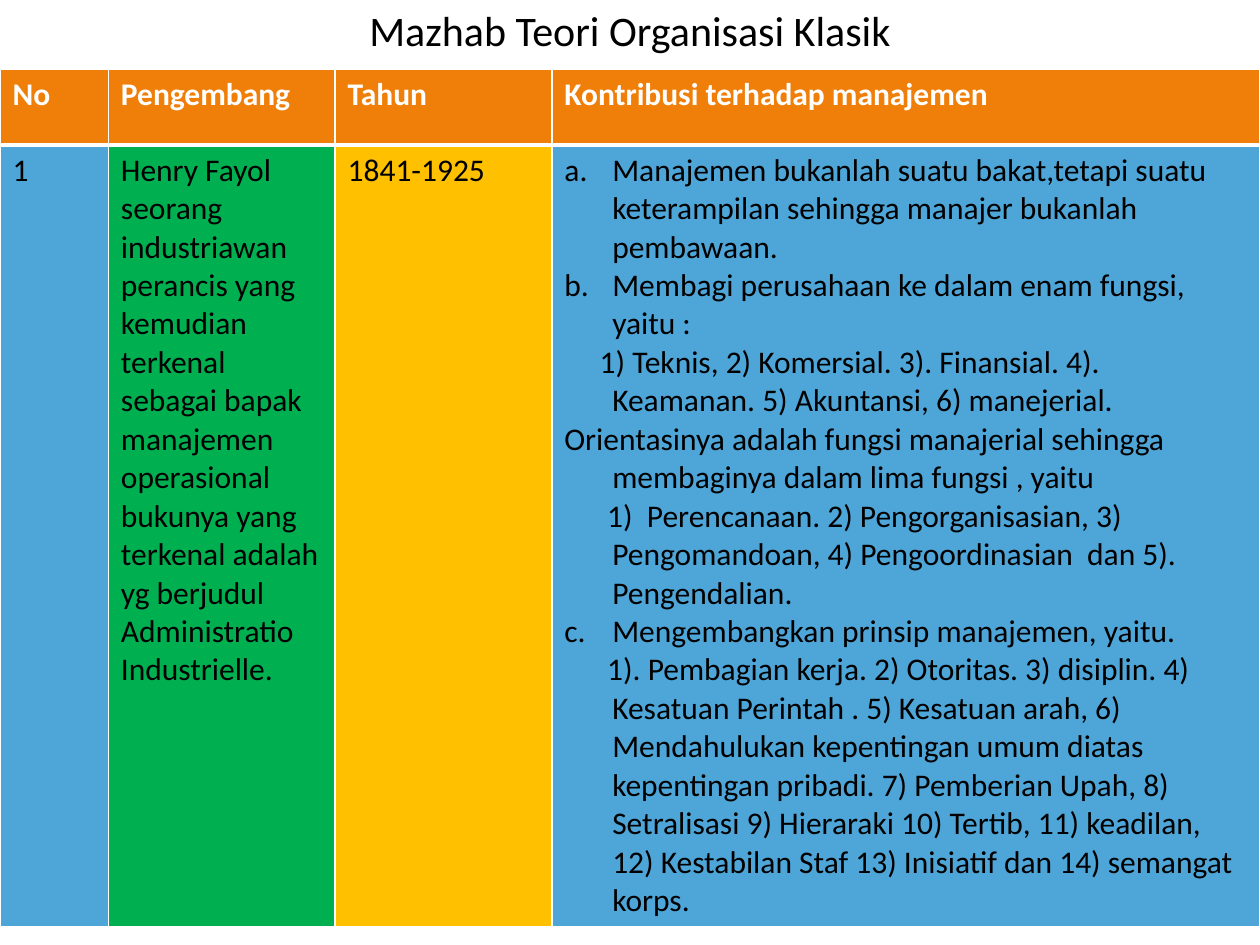
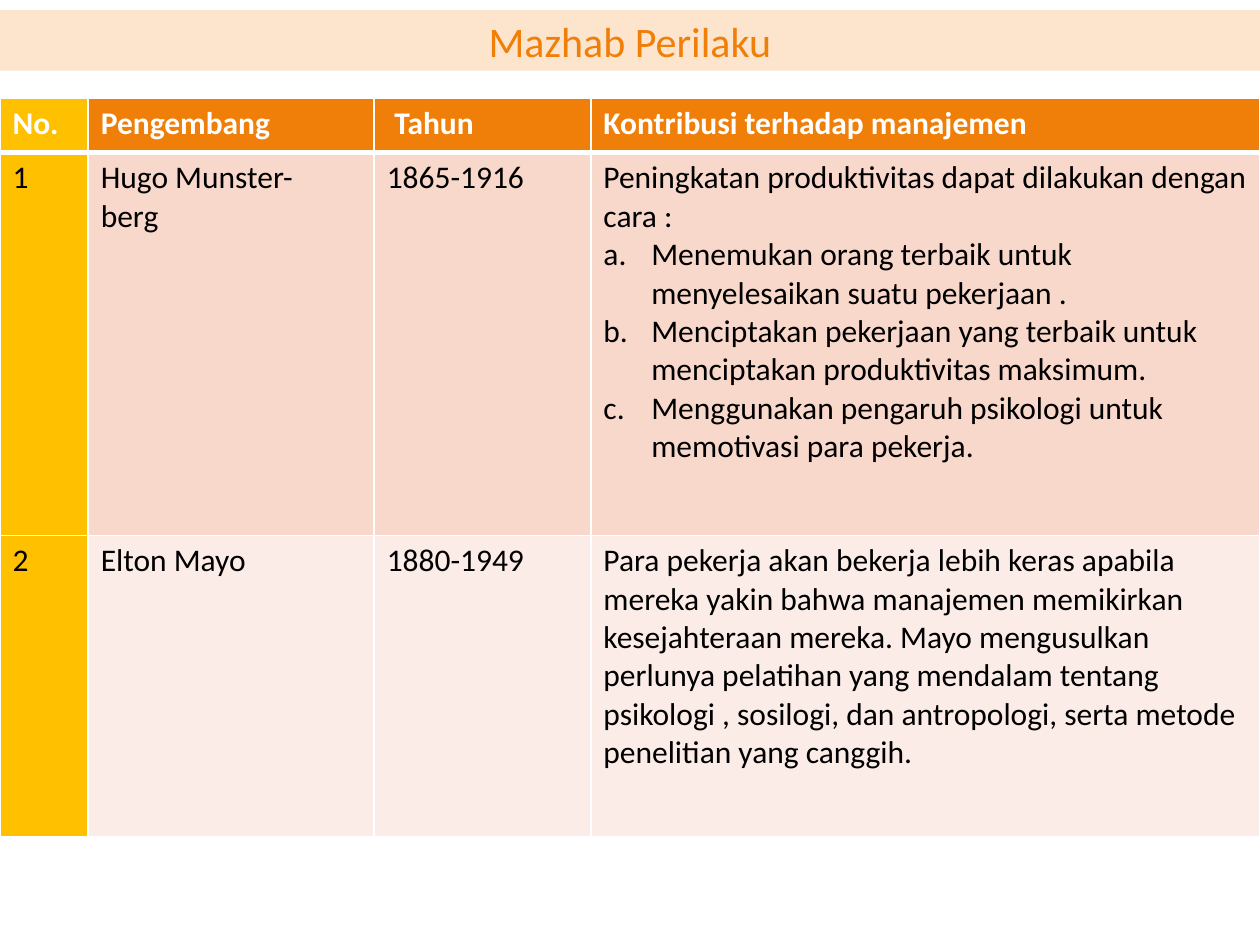
from dataclasses import dataclass

from lxml.etree import SubElement
from pptx import Presentation
from pptx.dml.color import RGBColor as RGB
from pptx.enum.text import MSO_ANCHOR as Anchor, MSO_AUTO_SIZE as AutoSize, PP_ALIGN as Align
from pptx.oxml.ns import qn
from pptx.util import Inches, Pt


@dataclass(frozen=True)
class Theme:
    font: str = "Calibri"
    title_size: int = 24
    cell_size: int = 18
    rule: int = 1
    header_rule: int = 3
    hang: float = 0.38
    white: str = "FFFFFF"
    black: str = "000000"
    orange: str = "F07F09"
    cream: str = "FDE5CD"
    amber: str = "FFC000"
    blue: str = "4EA5D8"
    green: str = "00B050"
    rose: str = "F9D8CC"
    pale_rose: str = "FCECE7"


@dataclass(frozen=True)
class Para:
    """A paragraph: left margin and first-line indent in inches, start of its a., b. numbering."""
    text: str
    left: float = 0
    first: float = 0
    letter: int = 0


T = Theme()


def lettered(text, start=1):
    return Para(text, T.hang, -T.hang, start)


def hanging(text, offset=0.0):
    """Paragraph without a letter; its first line starts offset inches from the cell margin."""
    return Para(text, T.hang, offset - T.hang)


class Deck:
    """Holds the theme and the current slide; lengths are percentages of the slide's size."""

    def __init__(self, theme):
        self.theme = theme
        self.prs = Presentation()
        self.prs.slide_width, self.prs.slide_height = Inches(10), Inches(7.5)
        self.s = None

    def x(self, share):
        return round(self.prs.slide_width * share / 100)

    def y(self, share):
        return round(self.prs.slide_height * share / 100)

    def add_slide(self):
        self.s = self.prs.slides.add_slide(self.prs.slide_layouts[5])

    def run(self, p, text, size, color, bold=False):
        r = p.add_run()
        r.text = text
        f = r.font
        f.name, f.size, f.bold = self.theme.font, Pt(size), bold
        f.color.rgb = RGB.from_string(color)

    def title(self, text, top, height, color, band=None):
        sp = self.s.shapes.title
        sp.left, sp.top, sp.width, sp.height = 0, self.y(top), self.x(100), self.y(height)
        if band:
            sp.fill.solid()
            sp.fill.fore_color.rgb = RGB.from_string(band)
        tf = sp.text_frame
        tf.auto_size, tf.vertical_anchor = AutoSize.NONE, Anchor.MIDDLE
        p = tf.paragraphs[0]
        p.alignment = Align.CENTER
        self.run(p, text, self.theme.title_size, color)

    def borders(self, cell, top, bottom):
        tc_pr = cell._tc.get_or_add_tcPr()
        rule = self.theme.rule
        for side, width in zip("LRTB", (rule, rule, top, bottom)):
            ln = SubElement(tc_pr, qn(f"a:ln{side}"), w=str(Pt(width)))
            fill = SubElement(ln, qn("a:solidFill"))
            SubElement(fill, qn("a:srgbClr"), val=self.theme.white)

    def paragraph(self, p, para, color, bold):
        p_pr = p._p.get_or_add_pPr()
        p_pr.set("marL", str(Inches(para.left)))
        p_pr.set("indent", str(Inches(para.first)))
        if para.letter:
            SubElement(p_pr, qn("a:buAutoNum"), type="alphaLcPeriod", startAt=str(para.letter))
        self.run(p, para.text, self.theme.cell_size, color, bold)

    def cell(self, cell, content, fill, row):
        """Fill one cell; content is a string, a Para or a list of them."""
        t = self.theme
        header = row == 0
        self.borders(cell, t.header_rule if row == 1 else t.rule,
                     t.header_rule if header else t.rule)
        cell.fill.solid()
        cell.fill.fore_color.rgb = RGB.from_string(fill)
        tf = cell.text_frame
        for i, item in enumerate(content if isinstance(content, list) else [content]):
            p = tf.add_paragraph() if i else tf.paragraphs[0]
            para = Para(item) if isinstance(item, str) else item
            self.paragraph(p, para, t.white if header else t.black, header)

    def table(self, top, widths, heights, rows, fills):
        frame = self.s.shapes.add_table(len(rows), len(widths), 0, self.y(top),
                                        self.x(sum(widths)), self.y(sum(heights)))
        tbl = frame.table
        for col, width in zip(tbl.columns, widths):
            col.width = self.x(width)
        for i, (row, height) in enumerate(zip(tbl.rows, heights)):
            row.height = self.y(height)
            for cell, content, fill in zip(row.cells, rows[i], fills[i]):
                self.cell(cell, content, fill, i)


def classical_school(deck):
    deck.add_slide()
    deck.title("Mazhab Teori Organisasi Klasik", 0, 6.27, T.black)
    contributions = [
        lettered("Manajemen bukanlah suatu bakat,tetapi suatu keterampilan sehingga manajer "
                 "bukanlah pembawaan."),
        lettered("Membagi perusahaan ke dalam enam fungsi, yaitu :"),
        hanging("1) Teknis, 2) Komersial. 3). Finansial. 4). Keamanan. 5) Akuntansi, "
                "6) manejerial.", 0.28),
        hanging("Orientasinya adalah fungsi manajerial sehingga membaginya dalam lima fungsi , "
                "yaitu"),
        hanging("1)  Perencanaan. 2) Pengorganisasian, 3) Pengomandoan, 4) Pengoordinasian  "
                "dan 5). Pengendalian.", 0.34),
        lettered("Mengembangkan prinsip manajemen, yaitu.", 3),
        hanging("1). Pembagian kerja. 2) Otoritas. 3) disiplin. 4) Kesatuan Perintah . "
                "5) Kesatuan arah, 6) Mendahulukan kepentingan umum diatas kepentingan pribadi. "
                "7) Pemberian Upah, 8) Setralisasi 9) Hieraraki 10) Tertib, 11) keadilan, "
                "12) Kestabilan Staf 13) Inisiatif dan 14) semangat korps.", 0.34),
    ]
    fayol = ("Henry Fayol seorang industriawan perancis yang kemudian terkenal sebagai bapak "
             "manajemen operasional bukunya yang terkenal adalah yg berjudul Administratio "
             "Industrielle.")
    deck.table(
        7.33, (8.6, 18, 17.2, 56.2), (8, 79.47),
        [["No", "Pengembang", "Tahun", "Kontribusi terhadap manajemen"],
         ["1", fayol, "1841-1925", contributions]],
        [[T.orange] * 4, [T.blue, T.green, T.amber, T.blue]])


def behavioural_school(deck):
    deck.add_slide()
    deck.title("Mazhab Perilaku", 1.07, 6.4, T.orange, band=T.cream)
    munsterberg = [
        "Peningkatan produktivitas dapat dilakukan dengan cara :",
        lettered("Menemukan orang terbaik untuk menyelesaikan suatu pekerjaan ."),
        lettered("Menciptakan pekerjaan yang terbaik untuk menciptakan produktivitas maksimum."),
        lettered("Menggunakan pengaruh psikologi untuk memotivasi para pekerja."),
    ]
    mayo = ("Para pekerja akan bekerja lebih keras apabila mereka yakin bahwa manajemen "
            "memikirkan kesejahteraan mereka. Mayo mengusulkan perlunya pelatihan yang mendalam "
            "tentang psikologi , sosilogi, dan antropologi, serta metode penelitian yang canggih.")
    deck.table(
        10.4, (7, 22.7, 17.2, 53.1), (5.73, 40.53, 31.87),
        [["No.", "Pengembang", Para("Tahun", 0.06), "Kontribusi terhadap manajemen"],
         ["1", ["Hugo Munster-", "berg"], "1865-1916", munsterberg],
         ["2", "Elton Mayo", "1880-1949", mayo]],
        [[T.amber] + [fill] * 3 for fill in (T.orange, T.rose, T.pale_rose)])


def main():
    deck = Deck(T)
    classical_school(deck)
    behavioural_school(deck)
    deck.prs.save("out.pptx")


if __name__ == "__main__":
    main()
